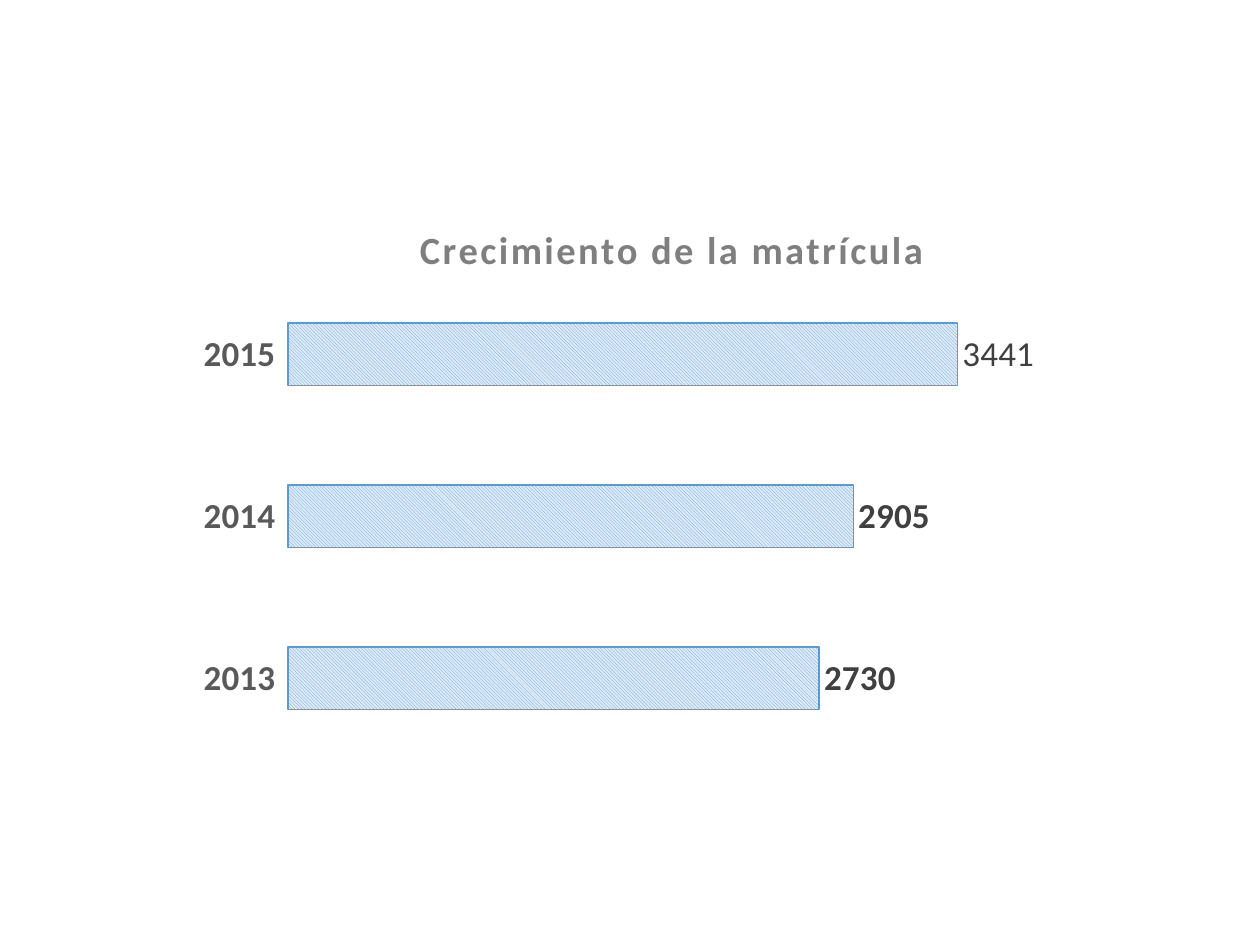
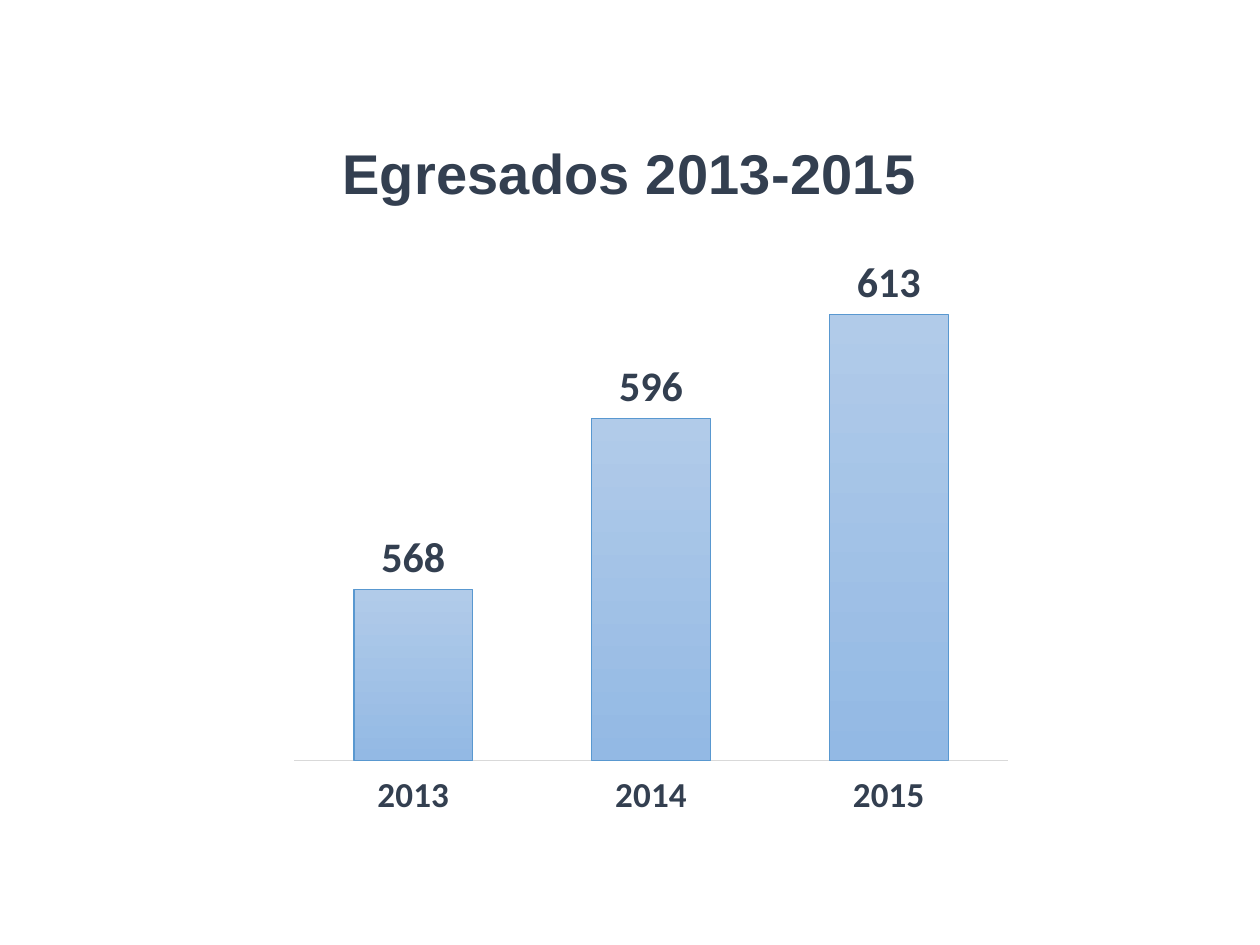
"""Build two slides with enrolment and graduate bar charts."""
from lxml import etree
from pptx import Presentation
from pptx.chart.data import CategoryChartData
from pptx.dml.color import RGBColor
from pptx.enum.chart import XL_CHART_TYPE, XL_LABEL_POSITION, XL_TICK_LABEL_POSITION, XL_TICK_MARK
from pptx.enum.dml import MSO_PATTERN
from pptx.oxml.ns import qn
from pptx.util import Cm, Pt

BAR, COLUMN = XL_CHART_TYPE.BAR_CLUSTERED, XL_CHART_TYPE.COLUMN_CLUSTERED
OUTSIDE = XL_LABEL_POSITION.OUTSIDE_END
LOW = XL_TICK_LABEL_POSITION.LOW
NO_TICK = XL_TICK_MARK.NONE
DIAGONAL = MSO_PATTERN.LIGHT_DOWNWARD_DIAGONAL
BLANK_LAYOUT = 6

THEME = {
    "font": "Calibri",
    "base": {"size": 10, "color": "000000"},
    "axis_size": 20,
    "line_width": 0.75,
}
YEARS = ("2013", "2014", "2015")
CHARTS = [
    {
        "type": BAR,
        "title": "Crecimiento de la matrícula",
        "values": (2730, 2905, 3441),
        "box": (3.66, 3.96, 19.84, 12.47),
        "plot": {"x": 0.108, "y": 0.124, "w": 0.791, "h": 0.786},
        "title_at": {"x": 0.235, "y": 0.031},
        "title_font": {"size": 22, "color": "7F7F7F", "bold": True},
        "spacing": 150,
        "axis_color": "595959",
        "axis_line": None,
        "label_font": {"size": 20, "color": "404040", "bold": True},
        "plain_labels": (2,),
        "scale": (0, 4000),
        "gap": 160,
        "overlap": 0,
        "pattern": ("5B9BD5", "DEEBF7"),
        "outline": "5B9BD5",
    },
    {
        "type": COLUMN,
        "title": "Egresados 2013-2015",
        "values": (568, 596, 613),
        "box": (4.67, 2.11, 16.03, 14.76),
        "plot": {"x": 0.079, "y": 0.228, "w": 0.897, "h": 0.668},
        "title_at": None,
        "title_font": {"size": 32, "color": "333F50", "bold": True, "name": "Arial"},
        "spacing": 0,
        "axis_color": "333F50",
        "axis_line": "D9D9D9",
        "label_font": {"size": 24, "color": "333F50", "bold": True},
        "plain_labels": (),
        "scale": (540, 620),
        "gap": 100,
        "overlap": -24,
        "gradient": ("B1CBE9", "93B9E4"),
        "outline": "5998D0",
    },
]


def set_attributes(obj, values):
    for name, value in values.items():
        setattr(obj, name, value)


def style_font(font, size, color, bold=False, name=THEME["font"]):
    set_attributes(font, {"size": Pt(size), "bold": bold, "name": name})
    font.color.rgb = RGBColor.from_string(color)


def style_line(line, color):
    if color is None:
        line.fill.background()
    else:
        line.color.rgb = RGBColor.from_string(color)
        line.width = Pt(THEME["line_width"])


def set_layout(parent, index, position):
    for old in parent.findall(qn("c:layout")):
        parent.remove(old)
    layout = etree.Element(qn("c:layout"))
    manual = etree.SubElement(layout, qn("c:manualLayout"))
    if "w" in position:
        etree.SubElement(manual, qn("c:layoutTarget")).set("val", "inner")
    for key in ("x", "y"):
        etree.SubElement(manual, qn(f"c:{key}Mode")).set("val", "edge")
    for key, value in position.items():
        etree.SubElement(manual, qn(f"c:{key}")).set("val", str(value))
    parent.insert(index, layout)


def add_title(chart, item):
    title = chart.chart_title
    r = title.text_frame.paragraphs[0].add_run()
    r.text = item["title"]
    style_font(r.font, **item["title_font"])
    r._r.get_or_add_rPr().set("spc", str(item["spacing"]))
    if item["title_at"]:
        set_layout(title._element, 1, item["title_at"])


def style_axes(chart, item):
    low, high = item["scale"]
    set_attributes(chart.value_axis, {
        "minimum_scale": low, "maximum_scale": high,
        "has_major_gridlines": False, "visible": False})
    axis = chart.category_axis
    set_attributes(axis, {
        "major_tick_mark": NO_TICK, "minor_tick_mark": NO_TICK,
        "tick_label_position": LOW, "has_major_gridlines": False})
    style_font(axis.tick_labels.font, THEME["axis_size"], item["axis_color"], True)
    style_line(axis.format.line, item["axis_line"])


def fill_bars(fill, item):
    if "pattern" in item:
        fill.patterned()
        fill.pattern = DIAGONAL
        fore, back = item["pattern"]
        fill.fore_color.rgb = RGBColor.from_string(fore)
        fill.back_color.rgb = RGBColor.from_string(back)
    else:
        fill.gradient()
        fill.gradient_angle = 270
        for stop, color in zip(fill.gradient_stops, item["gradient"]):
            stop.color.rgb = RGBColor.from_string(color)


def style_bars(plot, item):
    set_attributes(plot, {"gap_width": item["gap"], "overlap": item["overlap"],
                          "vary_by_categories": False})
    series = plot.series[0]
    series.invert_if_negative = False
    fill_bars(series.format.fill, item)
    style_line(series.format.line, item["outline"])
    labels = series.data_labels
    set_attributes(labels, {"show_value": True, "position": OUTSIDE})
    style_font(labels.font, **item["label_font"])
    for index in item["plain_labels"]:
        label = series.points[index].data_label
        style_font(label.font, **{**item["label_font"], "bold": False})
        label.position = OUTSIDE


def add_chart_slide(prs, item):
    s = prs.slides.add_slide(prs.slide_layouts[BLANK_LAYOUT])
    data = CategoryChartData()
    data.categories = YEARS
    data.add_series("Series 1", item["values"])
    box = [Cm(length) for length in item["box"]]
    chart = s.shapes.add_chart(item["type"], *box, data).chart
    chart.has_legend = False
    style_font(chart.font, **THEME["base"])
    add_title(chart, item)
    style_axes(chart, item)
    style_bars(chart.plots[0], item)
    set_layout(chart._chartSpace.chart.plotArea, 0, item["plot"])


def main():
    prs = Presentation()
    prs.slide_width, prs.slide_height = Cm(25.4), Cm(19.05)
    for item in CHARTS:
        add_chart_slide(prs, item)
    prs.save("out.pptx")


if __name__ == "__main__":
    main()
